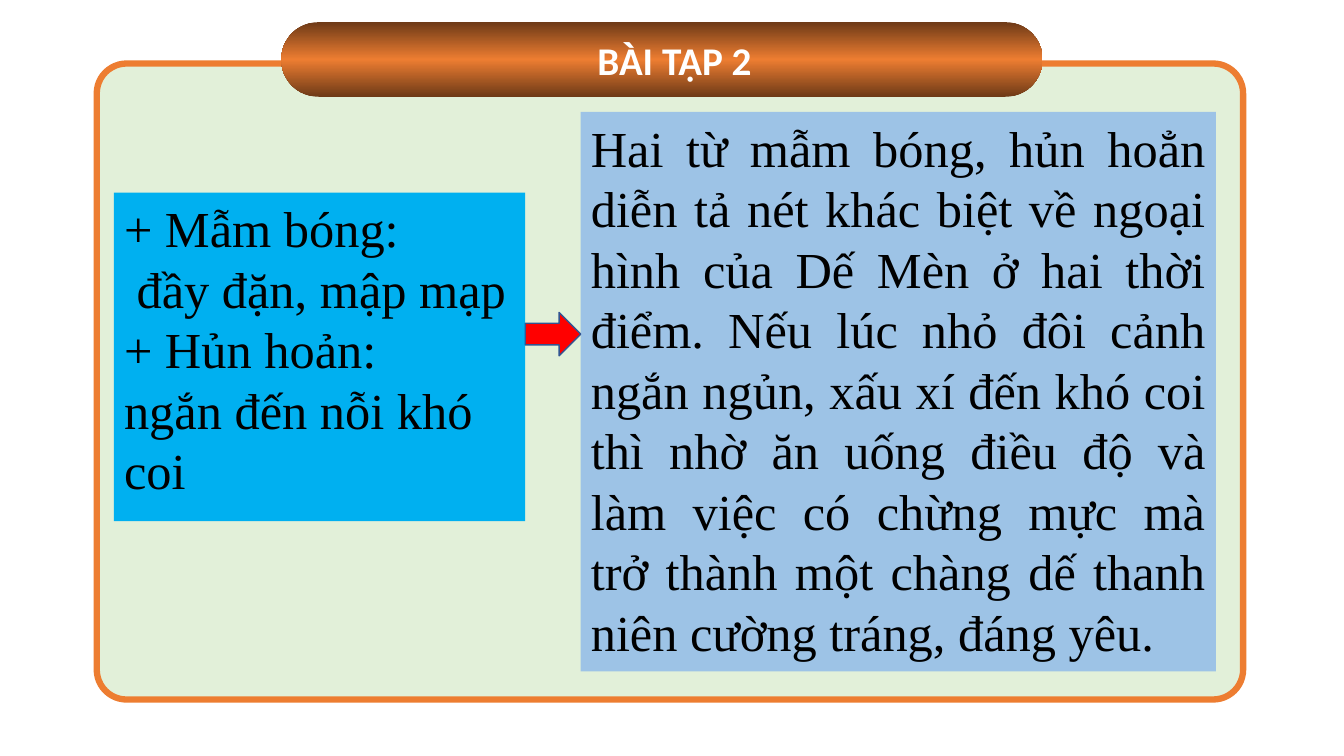
from dataclasses import dataclass

from lxml import etree
from pptx import Presentation
from pptx.dml.color import RGBColor
from pptx.enum.shapes import MSO_SHAPE
from pptx.enum.text import MSO_ANCHOR, MSO_AUTO_SIZE, PP_ALIGN
from pptx.oxml.ns import qn
from pptx.util import Inches, Pt

ROUND, ARROW = MSO_SHAPE.ROUNDED_RECTANGLE, MSO_SHAPE.RIGHT_ARROW
TOP, MIDDLE = MSO_ANCHOR.TOP, MSO_ANCHOR.MIDDLE
LEFT, CENTER, JUSTIFY = PP_ALIGN.LEFT, PP_ALIGN.CENTER, PP_ALIGN.JUSTIFY
FIXED = MSO_AUTO_SIZE.NONE

TITLE = "BÀI TẬP 2"
WORDS = [
    "+ Mẫm bóng:",
    " đầy đặn, mập mạp",
    "+ Hủn hoản:",
    "ngắn đến nỗi khó coi",
]
MEANING = [
    "Hai từ mẫm bóng, hủn hoẳn diễn tả nét khác biệt về ngoại hình của "
    "Dế Mèn ở hai thời điểm. Nếu lúc nhỏ đôi cảnh ngắn ngủn, xấu xí đến "
    "khó coi thì nhờ ăn uống điều độ và làm việc có chừng mực mà trở thành "
    "một chàng dế thanh niên cường tráng, đáng yêu."
]

CARD = (0.96, 0.63, 11.37, 6.31)
PILL = (2.79, 0.22, 7.55, 0.74)
LEFT_BOX = (1.13, 1.91, 4.08, 3.26)
RIGHT_BOX = (5.76, 1.11, 6.3, 5.55)
LEFT_END = LEFT_BOX[0] + LEFT_BOX[2]
LINK = (LEFT_END, 3.1, RIGHT_BOX[0] - LEFT_END, 0.43)


@dataclass(frozen=True)
class Theme:
    """Colours, fonts and type sizes of the slide."""
    card: str = "E2F0D9"
    edge: str = "ED7D31"
    shade: str = "6E3A17"
    words: str = "00B0F0"
    meaning: str = "9DC3E6"
    arrow: str = "FF0000"
    rim: str = "325491"
    ink: str = "000000"
    light: str = "FFFFFF"
    head: str = "Calibri"
    body: str = "Times New Roman"
    head_size: int = 28
    body_size: int = 36


THEME = Theme()


def paint(shape, color):
    """Give a shape a solid fill."""
    shape.fill.solid()
    shape.fill.fore_color.rgb = RGBColor.from_string(color)


def draw(slide, kind, box, fill, line=None, width=1):
    """Add a flat preset shape."""
    shape = slide.shapes.add_shape(kind, *map(Inches, box))
    shape.shadow.inherit = False
    paint(shape, fill)
    if line:
        shape.line.color.rgb = RGBColor.from_string(line)
        shape.line.width = Pt(width)
    else:
        shape.line.fill.background()
    return shape


def blend(shape, stops, angle):
    """Fill a shape with a linear gradient of any number of stops."""
    shape.fill.gradient()
    shape.fill.gradient_angle = angle
    holder = shape.element.spPr.find(qn("a:gradFill")).find(qn("a:gsLst"))
    for stop in list(holder):
        holder.remove(stop)
    for place, color in stops:
        stop = etree.SubElement(holder, qn("a:gs"), pos=str(place * 1000))
        etree.SubElement(stop, qn("a:srgbClr"), val=color)


def write(shape, box, lines, *, font, size, color, align=LEFT, anchor=TOP,
          bold=False, inset=0.1):
    """Place a placeholder in front and fill it with formatted lines."""
    shape.left, shape.top, shape.width, shape.height = map(Inches, box)
    shape.element.getparent().append(shape.element)
    frame = shape.text_frame
    frame.word_wrap = True
    frame.auto_size = FIXED
    frame.vertical_anchor = anchor
    frame.margin_left = Inches(inset)
    frame.text = "\n".join(lines)
    for para in frame.paragraphs:
        para.alignment = align
        para.space_before = Pt(0)
        props = para._p.get_or_add_pPr()
        props.set("marL", "0")
        props.set("indent", "0")
        etree.SubElement(props, qn("a:buNone"))
        style = para.runs[0].font
        style.name, style.size, style.bold = font, Pt(size), bold
        style.color.rgb = RGBColor.from_string(color)


def main():
    """Build the slide and save it."""
    deck = Presentation()
    deck.slide_width, deck.slide_height = Inches(13.33), Inches(7.5)
    slide = deck.slides.add_slide(deck.slide_layouts[3])
    title, words, meaning = list(slide.placeholders)

    card = draw(slide, ROUND, CARD, THEME.card, THEME.edge, 4.5)
    card.adjustments[0] = 0.047
    pill = draw(slide, ROUND, PILL, THEME.edge)
    pill.adjustments[0] = 0.5
    blend(pill, [(0, THEME.shade), (50, THEME.edge), (100, THEME.shade)], 90)
    write(title, PILL, [TITLE], font=THEME.head, size=THEME.head_size,
          color=THEME.light, align=CENTER, anchor=MIDDLE, bold=True, inset=0.35)

    for shape, box, lines, fill, align in [
        (words, LEFT_BOX, WORDS, THEME.words, LEFT),
        (meaning, RIGHT_BOX, MEANING, THEME.meaning, JUSTIFY),
    ]:
        paint(shape, fill)
        write(shape, box, lines, font=THEME.body, size=THEME.body_size,
              color=THEME.ink, align=align)
    draw(slide, ARROW, LINK, THEME.arrow, THEME.rim)
    deck.save("out.pptx")


if __name__ == "__main__":
    main()
